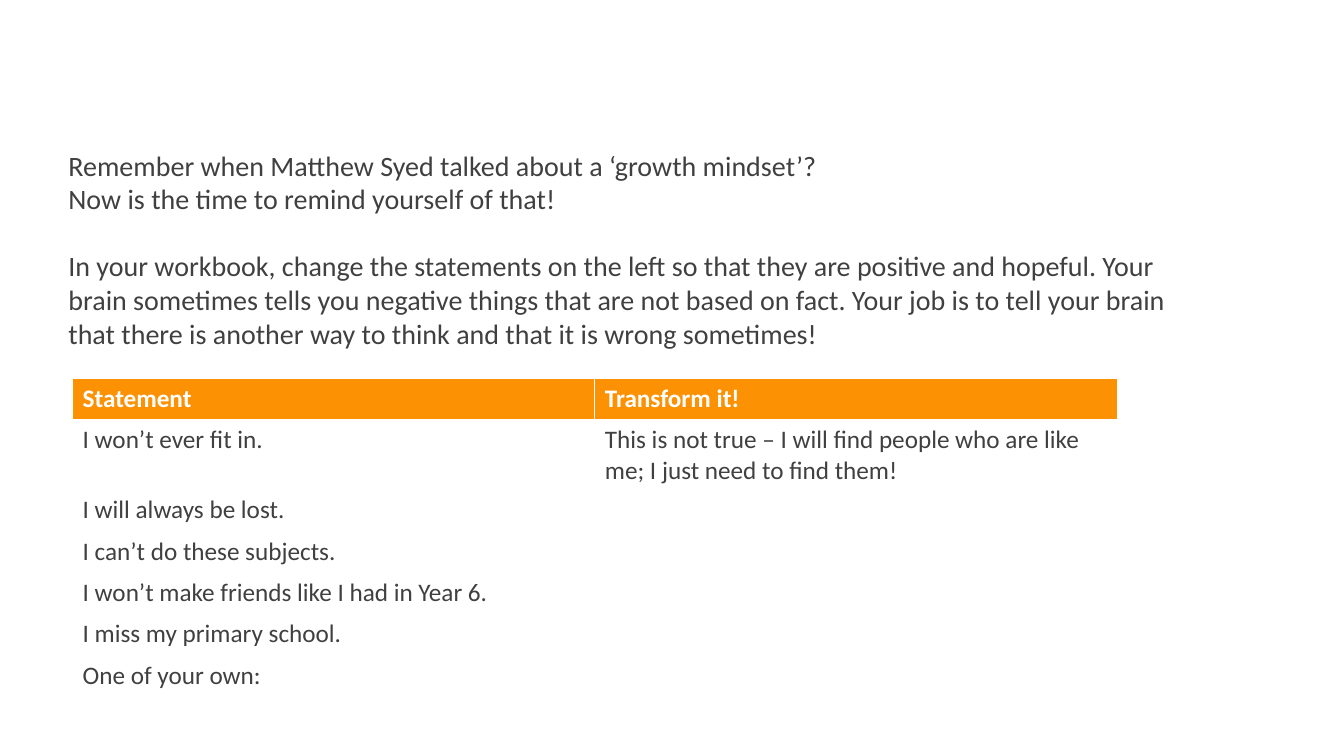
from pptx import Presentation
from pptx.dml.color import RGBColor
from pptx.enum.text import MSO_AUTO_SIZE
from pptx.util import Pt

INTRO = [
    "Remember when Matthew Syed talked about a ‘growth mindset’? \v"
    "Now is the time to remind yourself of that!",
    "In your workbook, change the statements on the left so that they are positive "
    "and hopeful. Your brain sometimes tells you negative things that are not based "
    "on fact. Your job is to tell your brain that there is another way to think and "
    "that it is wrong sometimes!",
]
STATEMENTS = [
    ("Statement", "Transform it!"),
    ("I won’t ever fit in.",
     "This is not true – I will find people who are like me; I just need to find them!"),
    ("I will always be lost.", ""),
    ("I can’t do these subjects.", ""),
    ("I won’t make friends like I had in Year 6.", ""),
    ("I miss my primary school.", ""),
    ("One of your own:", ""),
]

ORANGE = RGBColor(0xFC, 0x91, 0x03)
WHITE = RGBColor(0xFF, 0xFF, 0xFF)
GREY = RGBColor(0x40, 0x40, 0x40)
FIT_SHAPE = MSO_AUTO_SIZE.SHAPE_TO_FIT_TEXT

PX = 9144
SLIDE_SIZE = (1333, 750)
INTRO_BOX = (58, 142, 1138, 212)
TABLE_LEFT, TABLE_TOP = 72, 375
COLUMN_WIDTH, ROW_HEIGHT = 518, 41

INTRO_FORMAT = {"name": "Calibri", "size": Pt(20)}
HEADER_FORMAT = {"name": "Calibri", "size": Pt(18), "bold": True}
BODY_FORMAT = {"name": "Calibri", "size": Pt(18), "bold": False}


def px(*lengths):
    return [length * PX for length in lengths]


def format_font(font, values, color):
    for attribute, value in values.items():
        setattr(font, attribute, value)
    font.color.rgb = color


def add_intro(slide):
    frame = slide.shapes.add_textbox(*px(*INTRO_BOX)).text_frame
    frame.word_wrap = True
    frame.auto_size = FIT_SHAPE
    for index, text in enumerate(INTRO):
        paragraph = frame.add_paragraph() if index else frame.paragraphs[0]
        paragraph.text = text
        if index:
            paragraph.space_before = Pt(24)
        for run in paragraph.runs:
            format_font(run.font, INTRO_FORMAT, GREY)


def add_statements(slide):
    row_count, column_count = len(STATEMENTS), len(STATEMENTS[0])
    frame = px(TABLE_LEFT, TABLE_TOP,
               COLUMN_WIDTH * column_count, ROW_HEIGHT * row_count)
    table = slide.shapes.add_table(row_count, column_count, *frame).table
    table.horz_banding = False
    for row, texts in enumerate(STATEMENTS):
        for column, text in enumerate(texts):
            cell = table.cell(row, column)
            if row == 0:
                cell.fill.solid()
                cell.fill.fore_color.rgb = ORANGE
            else:
                cell.fill.background()
            if text:
                cell.text = text
                font = cell.text_frame.paragraphs[0].runs[0].font
                if row == 0:
                    format_font(font, HEADER_FORMAT, WHITE)
                else:
                    format_font(font, BODY_FORMAT, GREY)


def main():
    deck = Presentation()
    deck.slide_width, deck.slide_height = px(*SLIDE_SIZE)
    slide = deck.slides.add_slide(deck.slide_layouts[6])
    add_intro(slide)
    add_statements(slide)
    deck.save("out.pptx")


if __name__ == "__main__":
    main()
